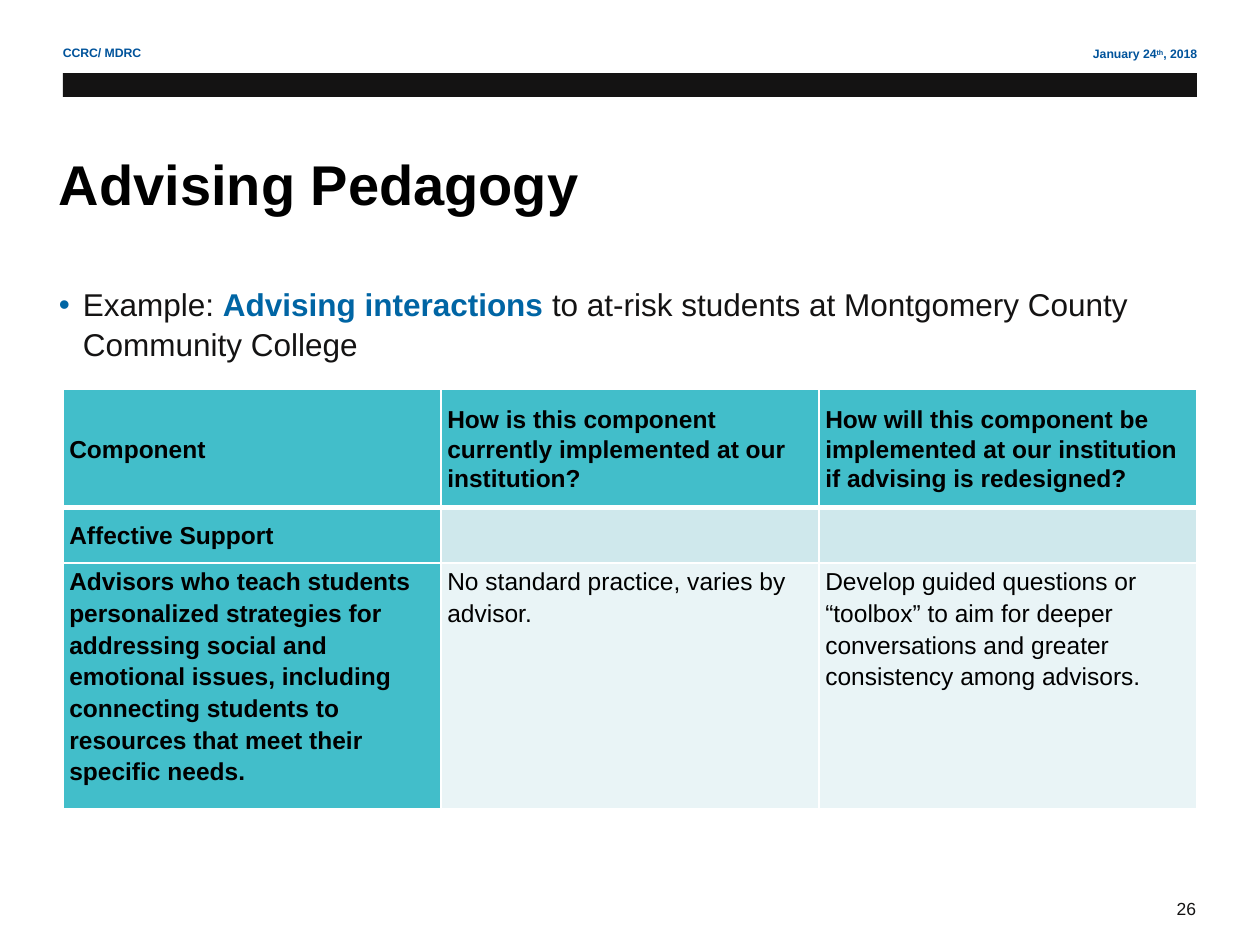
from lxml import etree
from pptx import Presentation
from pptx.dml.color import RGBColor
from pptx.enum import shapes, text
from pptx.oxml import ns
from pptx.util import Inches, Pt

COLORS = {
    "white": "FFFFFF", "black": "000000", "ink": "141313",
    "navy": "00539B", "blue": "0065A4",
    "teal": "42BECA", "mist": "CFE8EC", "pale": "E9F4F6",
}
ROWS = [
    ["Component",
     "How is this component currently implemented at our institution?",
     "How will this component be implemented at our institution if advising is redesigned?"],
    ["Affective Support", "", ""],
    ["Advisors who teach students personalized strategies for addressing social and "
     "emotional issues, including connecting students to resources that meet their "
     "specific needs.",
     "No standard practice, varies by advisor.",
     "Develop guided questions or “toolbox” to aim for deeper conversations and "
     "greater consistency among advisors."],
]
ROW_HEIGHTS = [0.94, 0.44, 1.95]
BODY_FILLS = ["teal", "mist", "pale"]


def rgb(name):
    return RGBColor.from_string(COLORS[name])


def add_span(para, words, size, color, bold=False):
    span = para.add_run()
    span.text = words
    span.font.name = "Arial"
    span.font.size = Pt(size)
    span.font.bold = bold
    span.font.color.rgb = rgb(color)
    return span


def add_box(page, left, top, width, height, anchor=text.MSO_ANCHOR.TOP):
    box = page.shapes.add_textbox(Inches(left), Inches(top), Inches(width), Inches(height))
    box.text_frame.word_wrap = True
    box.text_frame.vertical_anchor = anchor
    return box.text_frame.paragraphs[0]


def add_bullet(para, color, indent):
    props = para._p.get_or_add_pPr()
    props.set("marL", str(Inches(indent)))
    props.set("indent", str(-Inches(indent)))
    bullet_color = etree.SubElement(props, ns.qn("a:buClr"))
    etree.SubElement(bullet_color, ns.qn("a:srgbClr"), val=COLORS[color])
    etree.SubElement(props, ns.qn("a:buFont"), typeface="Arial")
    etree.SubElement(props, ns.qn("a:buChar"), char="•")


def add_bar(page):
    bar = page.shapes.add_shape(shapes.MSO_SHAPE.RECTANGLE,
                                Inches(0.5), Inches(0.58), Inches(9), Inches(0.19))
    bar.shadow.inherit = False
    bar.fill.solid()
    bar.fill.fore_color.rgb = rgb("ink")
    bar.line.fill.background()


def set_borders(cell, widths):
    props = cell._tc.get_or_add_tcPr()
    for position, (side, width) in enumerate(widths.items()):
        line = etree.Element(ns.qn(f"a:ln{side}"), w=str(Pt(width)))
        fill = etree.SubElement(line, ns.qn("a:solidFill"))
        etree.SubElement(fill, ns.qn("a:srgbClr"), val=COLORS["white"])
        props.insert(position, line)


def fill_cell(cell, row, column, words):
    is_label = row == 0 or column == 0
    is_last = row == len(ROWS) - 1
    cell.fill.solid()
    cell.fill.fore_color.rgb = rgb("teal" if is_label else BODY_FILLS[row])
    cell.margin_left = cell.margin_right = Inches(0.05)
    cell.margin_top = cell.margin_bottom = Inches(0.02 if row == 0 else 0.01)
    cell.vertical_anchor = text.MSO_ANCHOR.TOP if is_last else text.MSO_ANCHOR.MIDDLE
    set_borders(cell, {"L": 1, "R": 1, "T": 3 if row == 1 else 1, "B": 3 if row == 0 else 1})
    if words:
        para = cell.text_frame.paragraphs[0]
        para.line_spacing = 1.15 if is_last else 1.07
        add_span(para, words, 14, "black", is_label)


def add_component_table(page):
    frame = page.shapes.add_table(len(ROWS), len(ROWS[0]), Inches(0.5), Inches(3.09),
                                  Inches(9), Inches(sum(ROW_HEIGHTS)))
    table = frame.table
    for row, (height, entries) in enumerate(zip(ROW_HEIGHTS, ROWS)):
        table.rows[row].height = Inches(height)
        for column, words in enumerate(entries):
            fill_cell(table.cell(row, column), row, column, words)


def add_header(page):
    date = add_box(page, 6.42, 0.32, 3.18, 0.22)
    date.alignment = text.PP_ALIGN.RIGHT
    add_span(date, "January 24", 7, "navy", True)
    ordinal = add_span(date, "th", 7, "navy", True)
    ordinal._r.get_or_add_rPr().set("baseline", "30000")
    add_span(date, ", 2018", 7, "navy", True)
    add_bar(page)
    add_span(add_box(page, 0.4, 0.31, 3.56, 0.22), "CCRC/ MDRC", 7, "navy", True)


def add_example(page):
    para = add_box(page, 0.37, 2.2, 9, 0.78)
    add_bullet(para, "blue", 0.19)
    para.line_spacing = 1.05
    add_span(para, "Example: ", 18, "ink")
    add_span(para, "Advising interactions", 18, "blue", True)
    add_span(para, " to at-risk students at Montgomery County Community College", 18, "ink")


def main():
    deck = Presentation()
    deck.slide_width, deck.slide_height = Inches(10), Inches(7.5)
    page = deck.slides.add_slide(deck.slide_layouts[6])
    add_header(page)
    add_span(add_box(page, 9.24, 7.08, 0.46, 0.27), "26", 10, "ink")
    title = add_box(page, 0.37, 0.83, 9, 1.25, text.MSO_ANCHOR.MIDDLE)
    add_span(title, "Advising Pedagogy", 32, "black", True)
    add_example(page)
    add_component_table(page)
    deck.save("out.pptx")


if __name__ == "__main__":
    main()
